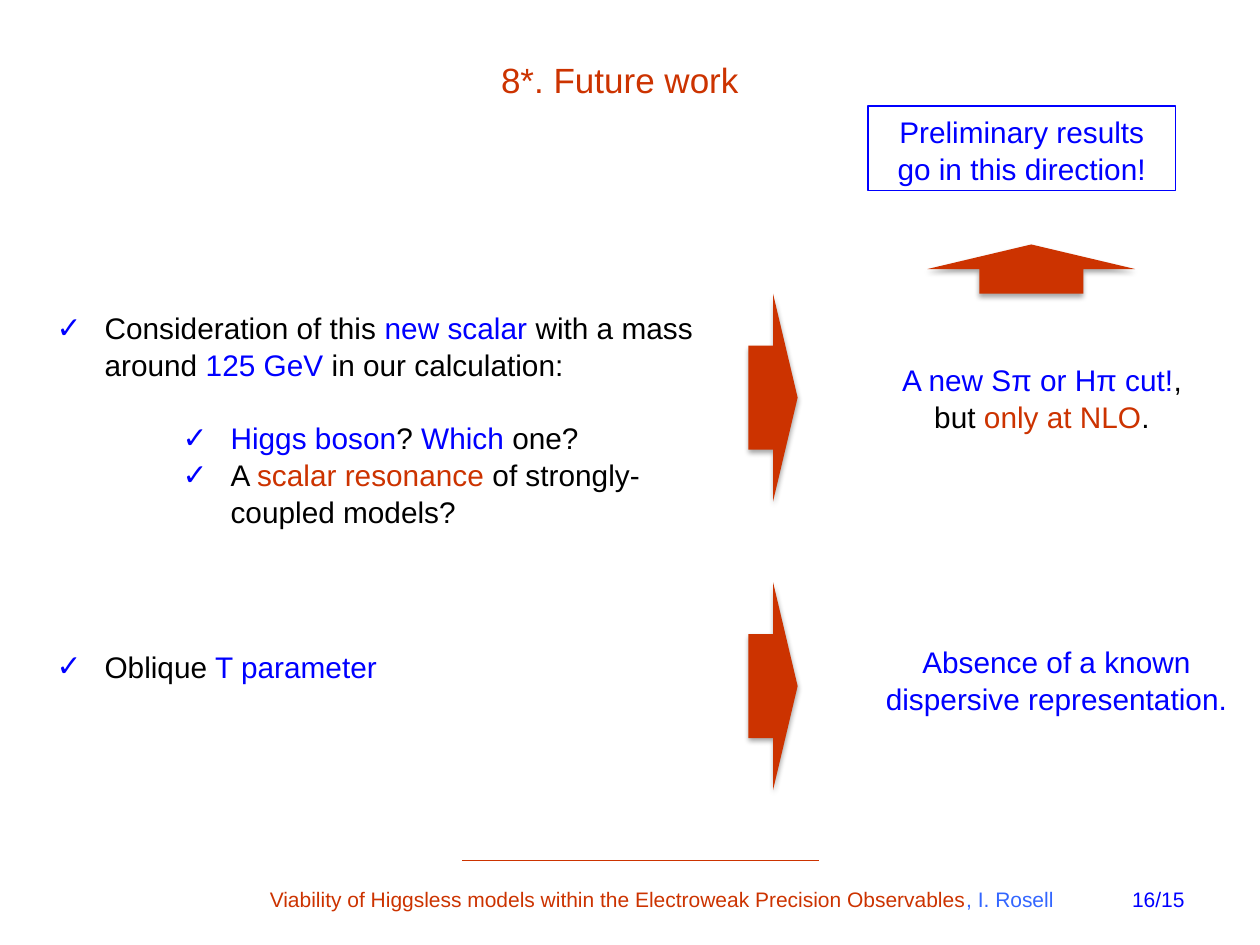
"""Builds the "Future work" slide of a physics talk."""
import pptx
import pptx.dml.color
import pptx.enum.shapes
import pptx.enum.text
import pptx.oxml
import pptx.oxml.ns
import pptx.util

BLUE, RED, BLACK, SKY = "0000FF", "CC3300", "000000", "3366FF"
NS = pptx.oxml.ns.nsdecls("a")
colour = pptx.dml.color.RGBColor.from_string
Pt = pptx.util.Pt
Align = pptx.enum.text.PP_ALIGN
Anchor = pptx.enum.text.MSO_ANCHOR
Fit = pptx.enum.text.MSO_AUTO_SIZE
Shape = pptx.enum.shapes.MSO_SHAPE

deck = pptx.Presentation()
deck.slide_width, deck.slide_height = pptx.util.Inches(10), pptx.util.Inches(7.5)
column, row = deck.slide_width / 100, deck.slide_height / 100
slide = deck.slides.add_slide(deck.slide_layouts[3])
shapes = slide.shapes


def grid(left, top, width, height):
    return [round(n * step) for n, step in zip((left, top, width, height), (column, row) * 2)]


def write(holder, paragraphs, size, align, anchor=Anchor.TOP, fit=Fit.SHAPE_TO_FIT_TEXT):
    frame = holder.text_frame
    frame_format = {"word_wrap": True, "auto_size": fit, "vertical_anchor": anchor}
    for key, value in frame_format.items():
        setattr(frame, key, value)
    paragraph_format = {"alignment": align, "line_spacing": 1.04, "space_before": Pt(0)}
    for number, runs in enumerate(paragraphs):
        paragraph = frame.add_paragraph() if number else frame.paragraphs[0]
        for key, value in paragraph_format.items():
            setattr(paragraph, key, value)
        for text, tint in runs:
            run = paragraph.add_run()
            run.text = text
            for key, value in {"name": "Arial", "size": Pt(size), "bold": False}.items():
                setattr(run.font, key, value)
            run.font.color.rgb = colour(tint)


title, scalar, oblique = slide.placeholders
areas = [
    (title, grid(5.1, 5.33, 88.2, 5.87)),
    (scalar, grid(3.5, 32, 55.1, 24.27)),
    (oblique, grid(3.5, 64.13, 62.2, 8.93)),
]
for holder, area in areas:
    for key, value in zip(("left", "top", "width", "height"), area):
        setattr(holder, key, value)

write(title, [[("8*. Future work", RED)]], 20, Align.CENTER)
write(scalar, [
    [("Consideration of this ", BLACK), ("new scalar ", BLUE), ("with a mass around ", BLACK),
     ("125 GeV", BLUE), (" in our calculation:", BLACK)],
    [("Higgs boson", BLUE), ("? ", BLACK), ("Which ", BLUE), ("one?", BLACK)],
    [("A ", BLACK), ("scalar resonance", RED), (" of strongly-coupled models?", BLACK)],
], 17, Align.LEFT)
write(oblique, [[("Oblique", BLACK), (" T parameter", BLUE)]], 17, Align.LEFT, Anchor.BOTTOM,
      Fit.NONE)

questions = scalar.text_frame.paragraphs[1:]
questions[0].space_before = Pt(20.4)
for question in questions:
    question.level = 2
for item in [*scalar.text_frame.paragraphs, *oblique.text_frame.paragraphs]:
    properties = item._p.get_or_add_pPr()
    hang = pptx.util.Inches(0.38)
    properties.set("marL", str(hang + pptx.util.Inches(item.level / 2)))
    properties.set("indent", str(-hang))
    for bullet in (f'<a:buClr {NS}><a:srgbClr val="{BLUE}"/></a:buClr>',
                   f'<a:buFont {NS} typeface="Arial"/>',
                   f'<a:buChar {NS} char="✓"/>'):
        properties.append(pptx.oxml.parse_xml(bullet))

answers = [
    (grid(70.5, 37.47, 24.4, 8.93),
     [("A new Sπ or Hπ cut!", BLUE), (", but ", BLACK), ("only at NLO", RED), (".", BLACK)]),
    (grid(68.9, 67.33, 29.9, 8.93),
     [("Absence of a known dispersive representation.", BLUE)]),
]
for area, runs in answers:
    write(shapes.add_textbox(*area), [runs], 17, Align.CENTER)

footers = [
    (grid(19.3, 93.07, 66.9, 3.73), Align.CENTER,
     [("Viability of Higgsless models within the Electroweak Precision Observables", RED),
      (", I. Rosell ", SKY)]),
    (grid(71.7, 93.07, 23.3, 6.93), Align.RIGHT, [("16/15", BLUE)]),
]
for area, align, runs in footers:
    write(shapes.add_textbox(*area), [runs], 12, align, fit=Fit.NONE)

preliminary = shapes.add_shape(Shape.RECTANGLE, *grid(68.9, 11.2, 24.4, 8.93))
preliminary.shadow.inherit = False
preliminary.fill.background()
preliminary.line.color.rgb = colour(BLUE)
preliminary.line.width = Pt(0.75)
write(preliminary, [[("Preliminary results go in this direction!", BLUE)]], 17, Align.CENTER)

for left, top, turn in ((59.4, 31.07, 0), (59.4, 61.6, 0), (79.9, 17.47, 270)):
    arrow = shapes.add_shape(Shape.RIGHT_ARROW, *grid(left, top, 3.9, 22))
    arrow.rotation = turn
    arrow.fill.solid()
    arrow.fill.fore_color.rgb = colour(RED)
    arrow.line.fill.background()
    arrow._element.spPr.append(pptx.oxml.parse_xml(
        f'<a:effectLst {NS}><a:outerShdw blurRad="{Pt(3.1)}" dist="{Pt(1.8)}" dir="5400000" '
        f'rotWithShape="0"><a:srgbClr val="{BLACK}"><a:alpha val="35000"/></a:srgbClr>'
        '</a:outerShdw></a:effectLst>'))

start_x, rule_y, end_x, _ = grid(36.7, 91.07, 65, 0)
rule = shapes.add_connector(pptx.enum.shapes.MSO_CONNECTOR.STRAIGHT, start_x, rule_y, end_x, rule_y)
rule.line.color.rgb = colour(RED)
rule.line.width = Pt(0.75)
rule._element.spPr.append(pptx.oxml.parse_xml(f"<a:effectLst {NS}/>"))

deck.save("out.pptx")
